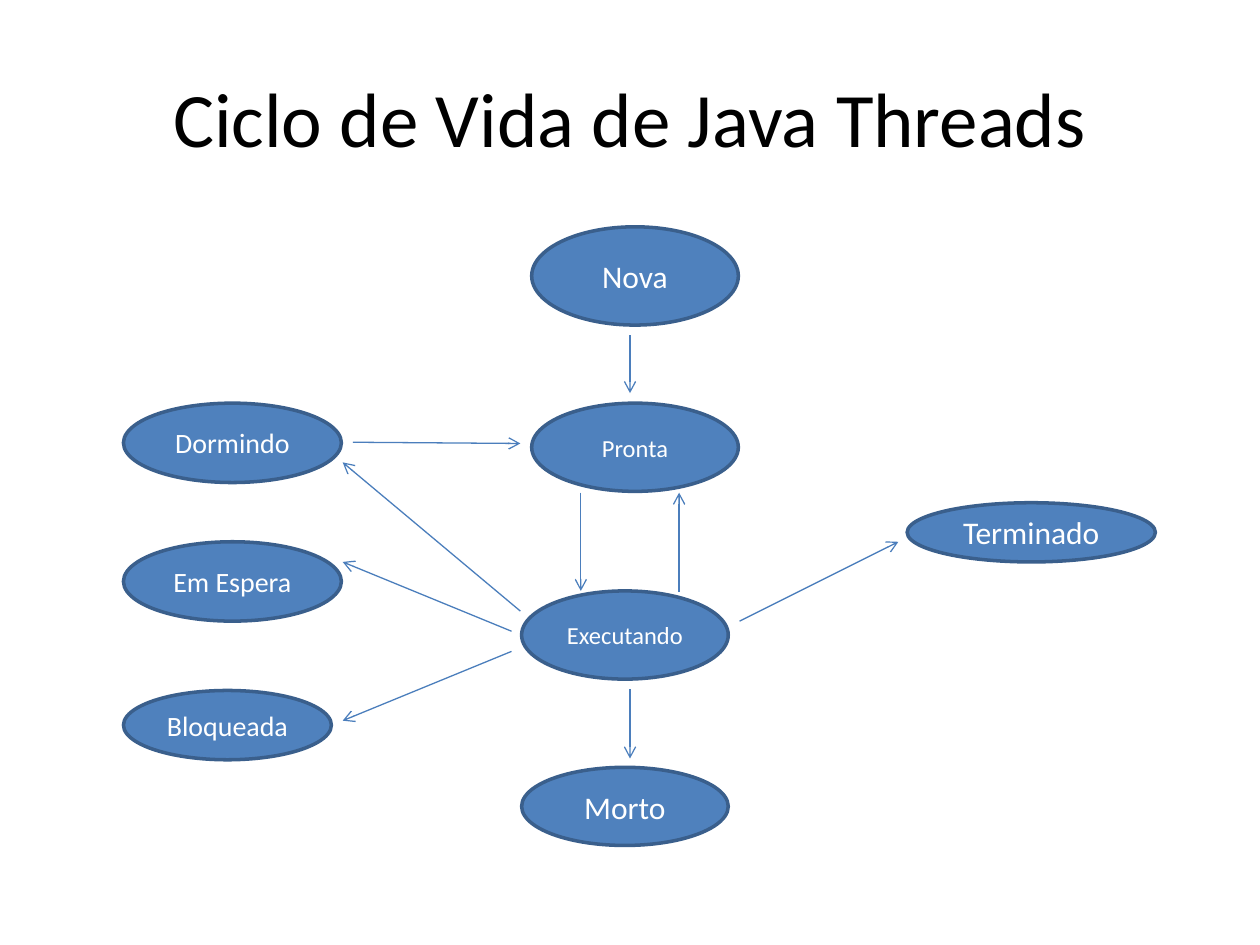
from lxml import etree
from pptx import Presentation
from pptx.dml.color import RGBColor
from pptx.enum import shapes, text
from pptx.oxml.ns import qn
from pptx.util import Inches, Pt

BLUE = RGBColor(0x4F, 0x81, 0xBD)
EDGE = RGBColor(0x3A, 0x5F, 0x8C)
LINK = RGBColor(0x4B, 0x7E, 0xBC)
WHITE = RGBColor(0xFF, 0xFF, 0xFF)
BLACK = RGBColor(0x00, 0x00, 0x00)
FONT = "Calibri"

STATES = [
    ("Nova", 18, 3.24, 0, 1.64, 0.78),
    ("Pronta", 14, 3.24, 1.4, 1.64, 0.7),
    ("Executando", 14, 3.16, 2.89, 1.64, 0.7),
    ("Morto", 18, 3.16, 4.29, 1.64, 0.62),
    ("Dormindo", 16, 0, 1.4, 1.73, 0.63),
    ("Em Espera", 16, 0, 2.5, 1.73, 0.63),
    ("Bloqueada", 16, 0, 3.68, 1.65, 0.55),
    ("Terminado", 18, 6.22, 2.19, 1.97, 0.47),
]
MOVES = [
    (4.02, 0.86, 4.02, 1.32),
    (3.63, 2.11, 3.63, 2.89),
    (4.41, 2.9, 4.41, 2.11),
    (4.02, 3.67, 4.02, 4.22),
    (4.89, 3.13, 6.15, 2.5),
    (3.15, 3.05, 1.74, 1.87),
    (3.08, 3.21, 1.74, 2.66),
    (3.08, 3.37, 1.74, 3.92),
    (1.82, 1.71, 3.15, 1.72),
]


def write(frame, words, size, color):
    frame.word_wrap = True
    frame.vertical_anchor = text.MSO_ANCHOR.MIDDLE
    para = frame.paragraphs[0]
    para.alignment = text.PP_ALIGN.CENTER
    run = para.add_run()
    run.text = words
    run.font.name = FONT
    run.font.size = Pt(size)
    run.font.color.rgb = color


def add_title(slide, left, top, width, height):
    title = slide.shapes.title
    title.left, title.top = Inches(left), Inches(top)
    title.width, title.height = Inches(width), Inches(height)
    write(title.text_frame, "Ciclo de Vida de Java Threads", 44, BLACK)


def add_state(slide, words, size, left, top, width, height):
    oval = slide.shapes.add_shape(
        shapes.MSO_SHAPE.OVAL,
        Inches(left), Inches(top), Inches(width), Inches(height))
    oval.shadow.inherit = False
    oval.fill.solid()
    oval.fill.fore_color.rgb = BLUE
    oval.line.color.rgb = EDGE
    oval.line.width = Pt(2)
    write(oval.text_frame, words, size, WHITE)


def add_arrow(slide, x1, y1, x2, y2):
    link = slide.shapes.add_connector(
        shapes.MSO_CONNECTOR.STRAIGHT,
        Inches(x1), Inches(y1), Inches(x2), Inches(y2))
    link.line.color.rgb = LINK
    link.line.width = Pt(0.75)
    etree.SubElement(link.line._get_or_add_ln(), qn("a:tailEnd"), type="arrow")
    etree.SubElement(link._element.spPr, qn("a:effectLst"))


def add_cycle(slide, left, top):
    for words, size, x, y, width, height in STATES:
        add_state(slide, words, size, left + x, top + y, width, height)
    for x1, y1, x2, y2 in MOVES:
        add_arrow(slide, left + x1, top + y1, left + x2, top + y2)


def main():
    deck = Presentation()
    deck.slide_width, deck.slide_height = Inches(10), Inches(7.5)
    slide = deck.slides.add_slide(deck.slide_layouts[5])
    add_title(slide, 0.5, 0.3, 9, 1.25)
    add_cycle(slide, 0.98, 1.8)
    deck.save("out.pptx")


if __name__ == "__main__":
    main()
